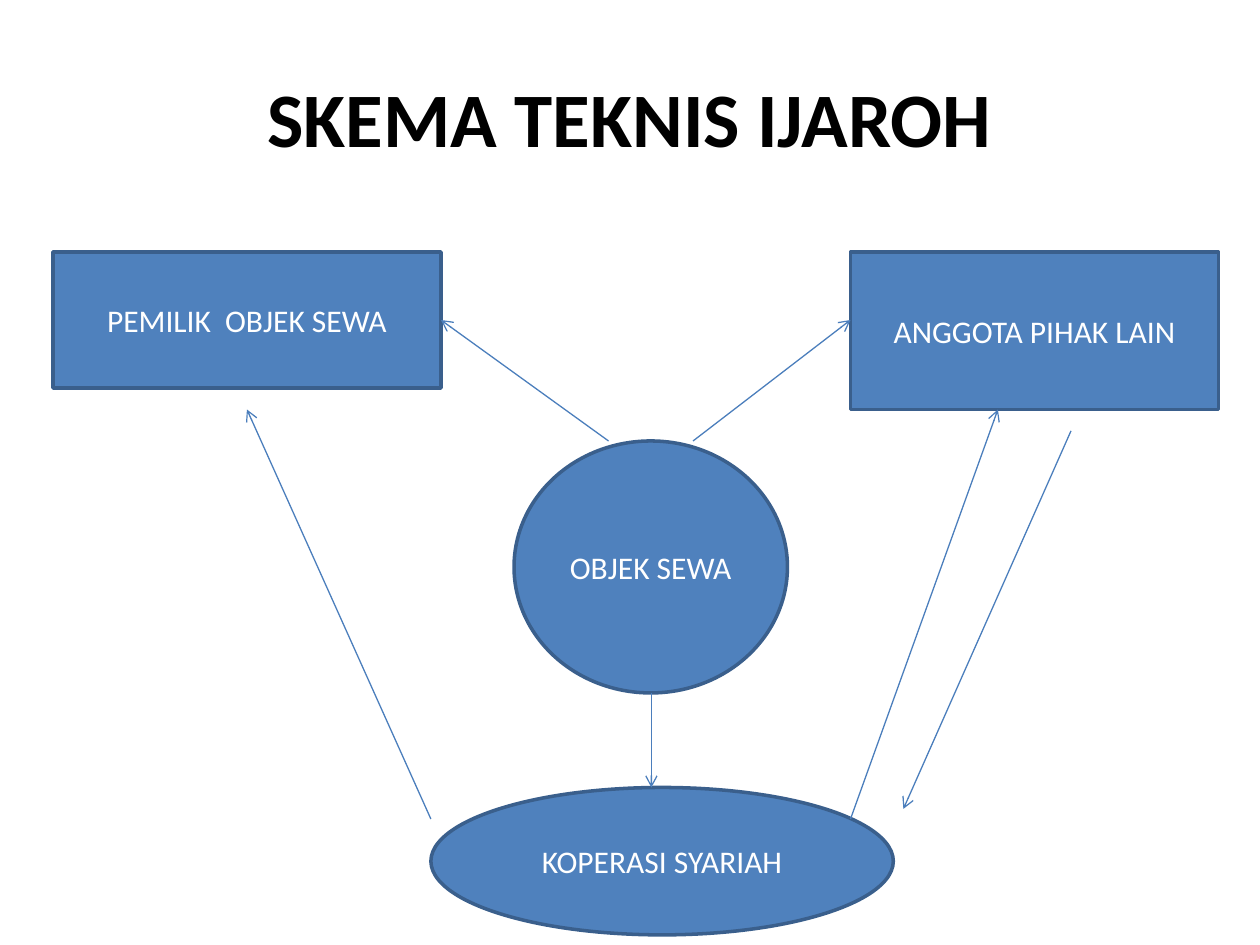
from typing import NamedTuple

from lxml import etree
from pptx import Presentation
from pptx.dml.color import RGBColor
from pptx.enum.shapes import MSO_CONNECTOR, MSO_SHAPE
from pptx.enum.text import MSO_ANCHOR, PP_ALIGN
from pptx.oxml.ns import qn
from pptx.util import Inches, Pt

RECTANGLE = MSO_SHAPE.RECTANGLE
CIRCLE = MSO_SHAPE.FLOWCHART_CONNECTOR
OVAL = MSO_SHAPE.OVAL
STRAIGHT = MSO_CONNECTOR.STRAIGHT
MIDDLE = MSO_ANCHOR.MIDDLE
CENTER = PP_ALIGN.CENTER

FONT = "Calibri"
BLACK, WHITE = "000000", "FFFFFF"
NODE_FILL, NODE_LINE, ARROW_LINE = "4F81BD", "3A5F8C", "4B7EBC"


class Node(NamedTuple):
    label: str
    kind: MSO_SHAPE
    left: float
    top: float
    width: float
    height: float


class Arrow(NamedTuple):
    start: tuple[float, float]
    end: tuple[float, float]


NODES = [
    Node("PEMILIK  OBJEK SEWA", RECTANGLE, 0.42, 2, 3.08, 1.08),
    Node("ANGGOTA PIHAK LAIN", RECTANGLE, 6.75, 2, 2.92, 1.25),
    Node("OBJEK SEWA", CIRCLE, 4.08, 3.5, 2.17, 2),
    Node("KOPERASI SYARIAH", OVAL, 3.42, 6.25, 3.67, 1.17),
]

ARROWS = [
    Arrow((5.5, 3.5), (6.75, 2.54)),
    Arrow((4.83, 3.5), (3.5, 2.54)),
    Arrow((3.42, 6.5), (1.96, 3.25)),
    Arrow((6.75, 6.5), (7.92, 3.25)),
    Arrow((8.5, 3.42), (7.17, 6.42)),
    Arrow((5.17, 5.5), (5.17, 6.25)),
]


def color(value: str) -> RGBColor:
    return RGBColor.from_string(value)


def write_text(shape, text: str, size: float, text_color: str, bold: bool = False) -> None:
    frame = shape.text_frame
    frame.word_wrap = True
    frame.vertical_anchor = MIDDLE
    para = frame.paragraphs[0]
    para.text = text
    para.alignment = CENTER
    para.font.name = FONT
    para.font.size = Pt(size)
    para.font.bold = bold
    para.font.color.rgb = color(text_color)


def draw_title(slide, text: str) -> None:
    title = slide.shapes.title
    title.left, title.top = Inches(0.5), Inches(0.3)
    title.width, title.height = Inches(9), Inches(1.25)
    write_text(title, text, 44, BLACK, bold=True)


def draw_node(slide, node: Node) -> None:
    shape = slide.shapes.add_shape(
        node.kind, Inches(node.left), Inches(node.top),
        Inches(node.width), Inches(node.height))
    shape.shadow.inherit = False
    shape.fill.solid()
    shape.fill.fore_color.rgb = color(NODE_FILL)
    shape.line.color.rgb = color(NODE_LINE)
    shape.line.width = Pt(2)
    write_text(shape, node.label, 18, WHITE)


def draw_arrow(slide, arrow: Arrow) -> None:
    ends = [Inches(value) for value in arrow.start + arrow.end]
    connector = slide.shapes.add_connector(STRAIGHT, *ends)
    connector.line.color.rgb = color(ARROW_LINE)
    connector.line.width = Pt(0.75)
    properties = connector._element.spPr
    etree.SubElement(properties.find(qn("a:ln")), qn("a:tailEnd"), type="arrow")
    etree.SubElement(properties, qn("a:effectLst"))


def main() -> None:
    deck = Presentation()
    deck.slide_width, deck.slide_height = Inches(10), Inches(7.5)
    slide = deck.slides.add_slide(deck.slide_layouts.get_by_name("Title Only"))
    draw_title(slide, "SKEMA TEKNIS IJAROH")
    for node in NODES:
        draw_node(slide, node)
    for arrow in ARROWS:
        draw_arrow(slide, arrow)
    deck.save("out.pptx")


if __name__ == "__main__":
    main()
